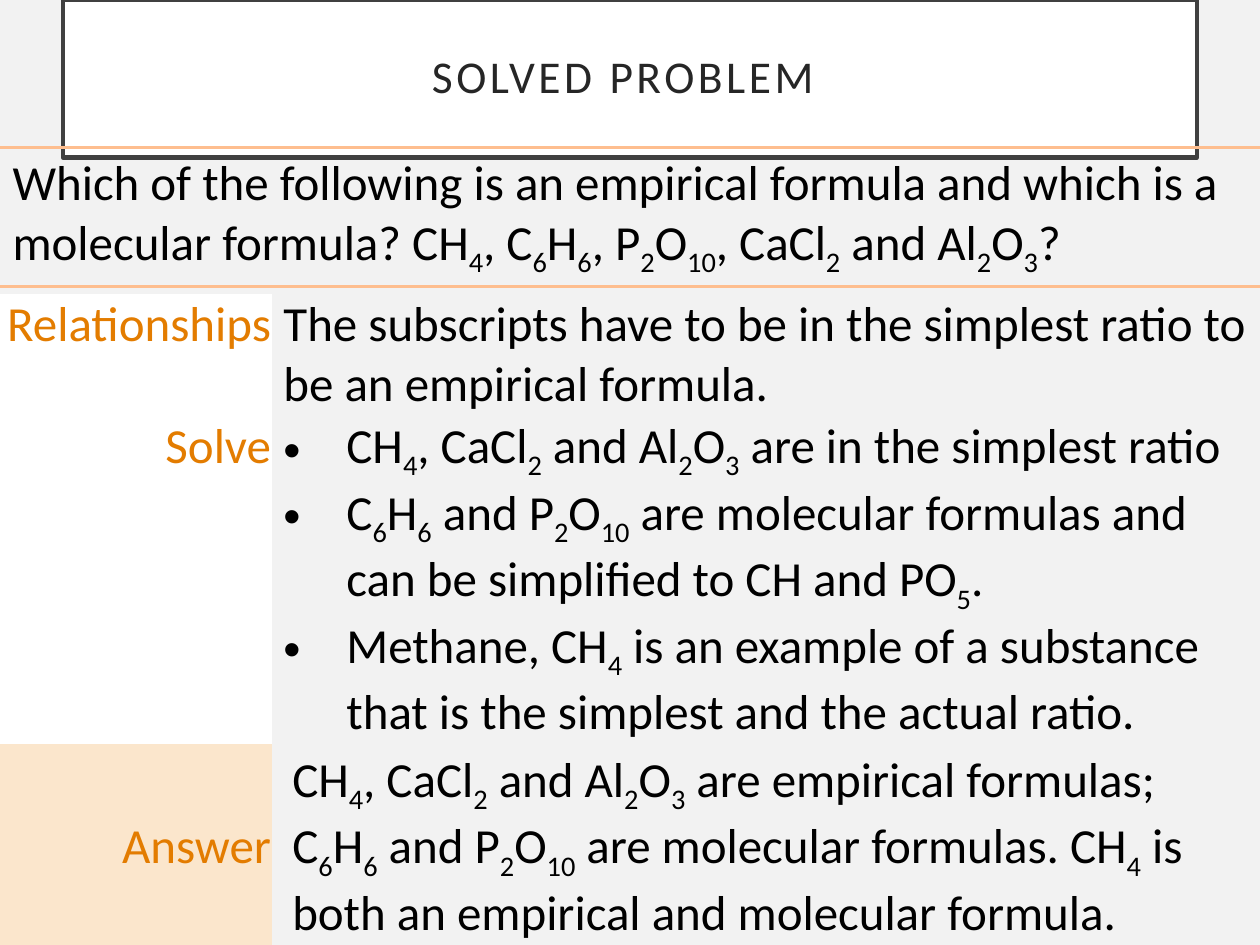
import pptx
import pptx.util
import pptx.dml.color
import pptx.enum.text
import pptx.oxml
import pptx.oxml.ns
from dataclasses import dataclass
from lxml import etree

Inches, Pt = pptx.util.Inches, pptx.util.Pt
RGB = pptx.dml.color.RGBColor.from_string
ALIGN = pptx.enum.text.PP_ALIGN
ANCHOR = pptx.enum.text.MSO_ANCHOR
qn = pptx.oxml.ns.qn


@dataclass
class Theme:
    font: str = "Calibri"
    title_size: int = 26
    body_size: int = 28
    background: str = "F2F2F2"
    white: str = "FFFFFF"
    frame: str = "404040"
    title: str = "262626"
    text: str = "000000"
    label: str = "E37C00"
    answer: str = "FBE6CC"
    rule: str = "FEBE8F"


theme = Theme()
NO_STYLE = "{2D5ABB26-0587-4C30-8999-92F81FD0307C}"


def add_plain_table(left, top, widths, heights):
    """Add a table without style, sized by its columns and rows."""
    frame = s.shapes.add_table(len(heights), len(widths), Inches(left), Inches(top),
                               Inches(sum(widths)), Inches(sum(heights)))
    table = frame.table
    table.first_row = table.horz_banding = False
    frame._element.find(".//" + qn("a:tableStyleId")).text = NO_STYLE
    for column, width in zip(table.columns, widths):
        column.width = Inches(width)
    for row, height in zip(table.rows, heights):
        row.height = Inches(height)
    return table


def fill_cell(cell, lines, color=theme.text, margins=(0.01,) * 4, align=ALIGN.LEFT,
              anchor=ANCHOR.TOP, fill=None, bullets=False):
    """Write lines into a cell; text between ~ signs is subscript."""
    (cell.margin_left, cell.margin_top,
     cell.margin_right, cell.margin_bottom) = map(Inches, margins)
    cell.vertical_anchor = anchor
    if fill:
        cell.fill.solid()
        cell.fill.fore_color.rgb = RGB(fill)
    else:
        cell.fill.background()
    tf = cell.text_frame
    for i, line in enumerate(lines):
        p = tf.add_paragraph() if i else tf.paragraphs[0]
        p.alignment = align
        if bullets:
            pPr = p._p.get_or_add_pPr()
            pPr.set("marL", str(Inches(0.5)))
            pPr.set("indent", str(-Inches(0.5)))
            etree.SubElement(pPr, qn("a:buFont"), typeface="Arial")
            etree.SubElement(pPr, qn("a:buChar"), char="•")
        for j, part in enumerate(line.split("~")):
            r = p.add_run()
            r.text = part
            r.font.name = theme.font
            r.font.size = Pt(theme.body_size)
            r.font.color.rgb = RGB(color)
            if j % 2:
                r.font._element.set("baseline", "-25000")


prs = pptx.Presentation()
prs.slide_width, prs.slide_height = Inches(10), Inches(7.5)
s = prs.slides.add_slide(prs.slide_layouts[5])
s.background.fill.solid()
s.background.fill.fore_color.rgb = RGB(theme.background)

# Framed title
sp = s.shapes.title
sp.left, sp.top, sp.width, sp.height = map(Inches, (0.5, 0, 9, 1.25))
sp.fill.solid()
sp.fill.fore_color.rgb = RGB(theme.white)
sp.line.color.rgb = RGB(theme.frame)
sp.line.width = Pt(2.5)
tf = sp.text_frame
tf.text = "SOLVED PROBLEM "
tf.word_wrap = True
tf.vertical_anchor = ANCHOR.MIDDLE
tf.margin_left = tf.margin_top = tf.margin_right = tf.margin_bottom = Inches(0.2)
p = tf.paragraphs[0]
p.alignment = ALIGN.CENTER
p.line_spacing = 0.9
r = p.runs[0]
r.font.name = theme.font
r.font.size = Pt(theme.title_size)
r.font.color.rgb = RGB(theme.title)
r.font._element.set("spc", "200")

# Question between two rules
question = add_plain_table(0, 1.17, [10], [1.03]).cell(0, 0)
fill_cell(question, ["Which of the following is an empirical formula and which is a molecular "
                     "formula? CH~4~, C~6~H~6~, P~2~O~10~, CaCl~2~ and Al~2~O~3~?"],
          margins=(0.1, 0.05, 0.1, 0.05), anchor=ANCHOR.MIDDLE)
tcPr = question._tc.get_or_add_tcPr()
for i, side in enumerate(("a:lnT", "a:lnB")):
    ln = etree.Element(qn(side), w=str(Pt(1.5)))
    solid = etree.SubElement(ln, qn("a:solidFill"))
    etree.SubElement(solid, qn("a:srgbClr"), val=theme.rule)
    tcPr.insert(i, ln)

# Solution steps: label, gap, text
steps = [
    ("Relationships", theme.white, ANCHOR.TOP,
     ["The subscripts have to be in the simplest ratio to be an empirical formula."], {}),
    ("Solve", theme.white, ANCHOR.TOP,
     ["CH~4~, CaCl~2~ and Al~2~O~3~ are in the simplest ratio",
      "C~6~H~6~ and P~2~O~10~ are molecular formulas and can be simplified to CH and PO~5~.",
      "Methane, CH~4~ is an example of a substance that is the simplest and the actual ratio."],
     {"bullets": True}),
    ("Answer", theme.answer, ANCHOR.MIDDLE,
     ["CH~4~, CaCl~2~ and Al~2~O~3~ are empirical formulas; C~6~H~6~ and P~2~O~10~ are "
      "molecular formulas. CH~4~ is both an empirical and molecular formula."],
     {"margins": (0.08, 0.05, 0.1, 0.05)}),
]
table = add_plain_table(0, 2.33, [2.16, 0.08, 7.67], [0.45, 2.39, 0.59])
for i, (label, fill, anchor, lines, options) in enumerate(steps):
    fill_cell(table.cell(i, 0), [label], theme.label, align=ALIGN.RIGHT, anchor=anchor, fill=fill)
    fill_cell(table.cell(i, 1), [], margins=(0,) * 4)
    fill_cell(table.cell(i, 2), lines, anchor=anchor, **options)

prs.save("out.pptx")
